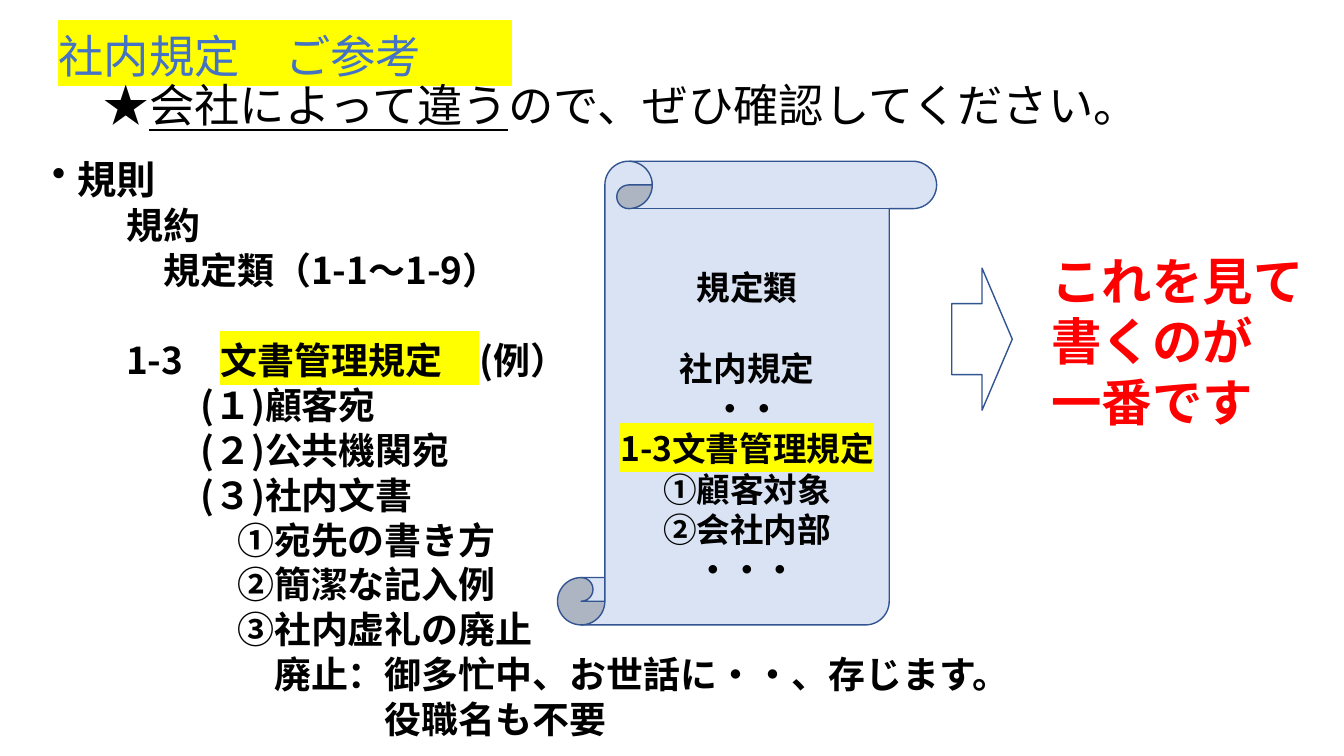
"""Build the slide on company document rules."""
from lxml.etree import SubElement
from pptx import Presentation
from pptx.dml.color import RGBColor
from pptx.enum.shapes import MSO_SHAPE as Shape
from pptx.enum.text import MSO_ANCHOR as Anchor, PP_ALIGN as Align
from pptx.oxml.ns import qn
from pptx.util import Inches, Pt

FONT = "Noto Sans CJK JP"
COLORS = {"title": "4472C4", "text": "000000", "mark": "FFFF00",
          "scroll": "DAE3F3", "outline": "325491", "advice": "FF0000"}
PLAIN, MARK, UNDERLINE = "plain", "mark", "underline"

HEADING = [("社内規定　ご参考　　", MARK)]
NOTICE = [("★", PLAIN), ("会社によって違う", UNDERLINE),
          ("ので、ぜひ確認してください。", PLAIN)]
RULES = [
    (2, 0, [("規約", PLAIN)]),
    (3, 0, [("規定類（1-1～1-9）", PLAIN)]),
    (2, 1, [("1-3　", PLAIN), ("文書管理規定　", MARK), ("(例）", PLAIN)]),
    (4, 0, [("(１)顧客宛", PLAIN)]),
    (4, 0, [("(２)公共機関宛", PLAIN)]),
    (4, 0, [("(３)社内文書", PLAIN)]),
    (5, 0, [("①宛先の書き方", PLAIN)]),
    (5, 0, [("②簡潔な記入例", PLAIN)]),
    (5, 0, [("③社内虚礼の廃止", PLAIN)]),
    (6, 0, [("廃止：御多忙中、お世話に・・、存じます。", PLAIN)]),
    (9, 0, [("役職名も不要", PLAIN)]),
]
SCROLL = [(0, "規定類", PLAIN), (1, "社内規定", PLAIN), (0, "・・", PLAIN),
          (0, "1-3文書管理規定", MARK), (0, "①顧客対象", PLAIN),
          (0, "②会社内部", PLAIN), (0, "・・・", PLAIN)]
ADVICE = ["これを見て", "書くのが", "一番です"]


def add_line(frame, runs, size, pitch, color="text", bold=True, indent=0, gap=0):
    first = frame.paragraphs[0]
    line = frame.add_paragraph() if first.runs else first
    line.line_spacing = Pt(pitch)
    line.space_before = Pt(gap * pitch)
    line.font.size, line.font.bold, line.font.name = Pt(size), bold, FONT
    line.font.color.rgb = RGBColor.from_string(COLORS[color])
    props = line._p.get_or_add_pPr()
    SubElement(props.find(qn("a:defRPr")), qn("a:ea"), typeface=FONT)
    props.set("marL", str(Inches(indent)))
    for words, style in runs:
        run = line.add_run()
        run.text = words
        if style == UNDERLINE:
            run.font.underline = True
        elif style == MARK:
            highlight = SubElement(run._r.get_or_add_rPr(), qn("a:highlight"))
            SubElement(highlight, qn("a:srgbClr"), val=COLORS["mark"])
    return line


def add_text(slide, *box):
    frame = slide.shapes.add_textbox(*map(Inches, box)).text_frame
    frame.word_wrap = True
    return frame


def add_outlined(slide, kind, *box):
    outlined = slide.shapes.add_shape(kind, *map(Inches, box))
    outlined.shadow.inherit = False
    outlined.fill.background()
    outlined.line.color.rgb = RGBColor.from_string(COLORS["outline"])
    outlined.line.width = Pt(1)
    return outlined


def main():
    deck = Presentation()
    deck.slide_width, deck.slide_height = Inches(13.33), Inches(7.5)
    slide = deck.slides.add_slide(deck.slide_layouts[6])

    title = add_text(slide, 0.48, 0.27, 11.5, 1.1)
    add_line(title, HEADING, 32.4, 35.7, "title", False)
    add_line(title, NOTICE, 32.4, 35.7, bold=False, indent=0.45)

    rules = add_text(slide, 0.42, 1.51, 12.5, 5.9)
    top_rule = add_line(rules, [("規則", PLAIN)], 28.1, 32.1, indent=0.25)
    props = top_rule._p.get_or_add_pPr()
    props.set("indent", str(Inches(-0.25)))
    bullet = SubElement(props, qn("a:buChar"), char="•")
    props.find(qn("a:defRPr")).addprevious(bullet)
    for level, gap, runs in RULES:
        add_line(rules, runs, 26.4, 32.1, indent=level * 26.4 / 72, gap=gap)

    scroll = add_outlined(slide, Shape.VERTICAL_SCROLL, 5.53, 1.6, 3.76, 4.6)
    scroll.fill.solid()
    scroll.fill.fore_color.rgb = RGBColor.from_string(COLORS["scroll"])
    frame = scroll.text_frame
    frame.word_wrap, frame.vertical_anchor = True, Anchor.TOP
    frame.margin_top = Inches(0.58)
    frame.margin_left = frame.margin_right = Inches(0.05)
    for gap, words, style in SCROLL:
        entry = add_line(frame, [(words, style)], 24, 28.8, gap=gap)
        entry.alignment = Align.CENTER

    add_outlined(slide, Shape.RIGHT_ARROW, 9.44, 2.66, 0.6, 1.41)

    advice = add_text(slide, 10.33, 2.43, 2.99, 1.92)
    for words in ADVICE:
        add_line(advice, [(words, PLAIN)], 36, 43.2, "advice")

    deck.save("out.pptx")


if __name__ == "__main__":
    main()
